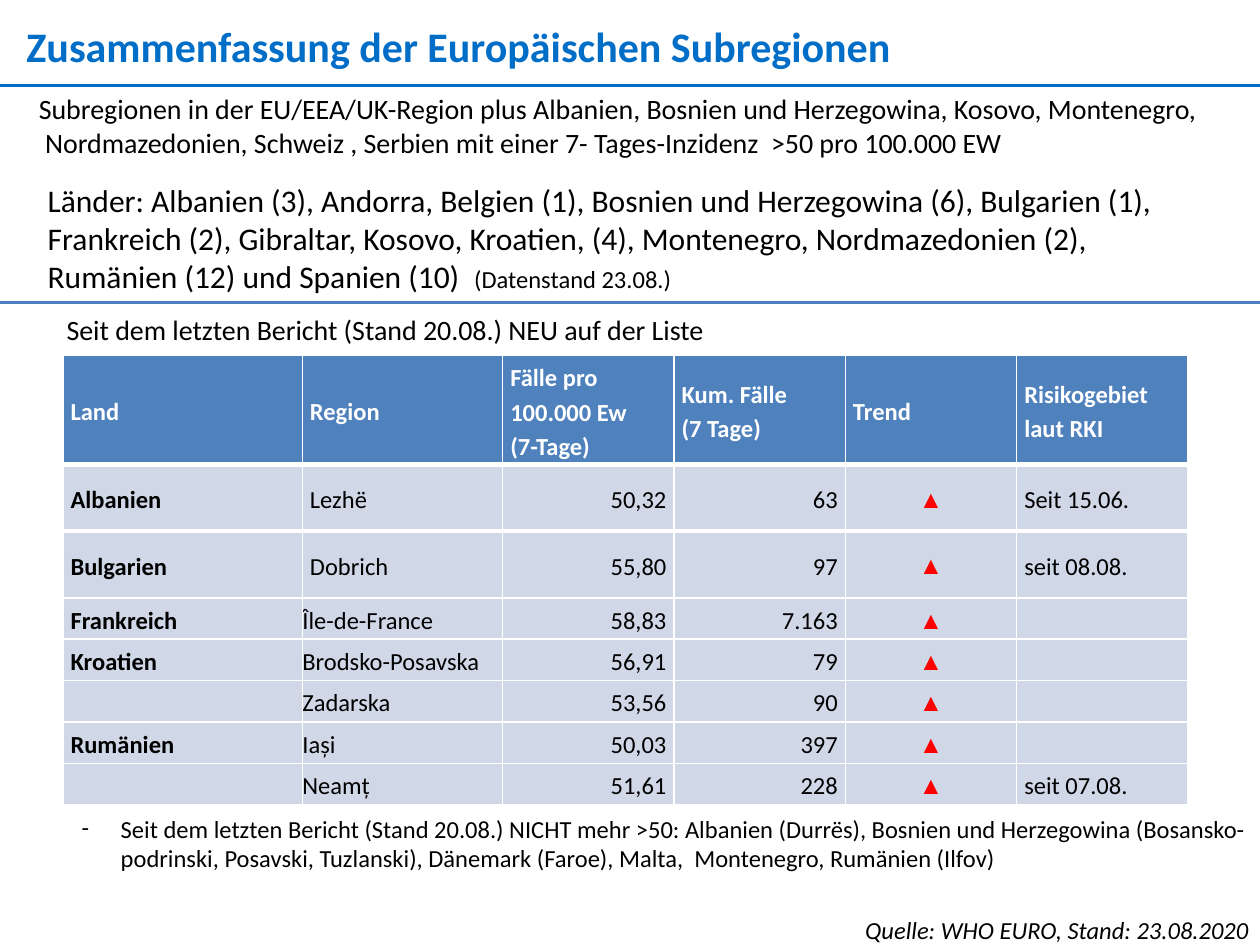
from dataclasses import dataclass

from lxml import etree
from pptx import Presentation
from pptx.dml.color import RGBColor
from pptx.enum import shapes, text
from pptx.oxml import ns
from pptx.util import Inches, Pt


@dataclass(frozen=True)
class Theme:
    font: str = "Calibri"
    symbol_font: str = "Arial"
    title: str = "006EC7"
    divider: str = "4B7EBC"
    header: str = "4F81BD"
    cell: str = "D0D8E8"
    ink: str = "000000"
    white: str = "FFFFFF"
    rising: str = "FF0000"
    title_size: int = 24
    countries_size: int = 18
    body_size: int = 16
    small_size: int = 14


THEME = Theme()
ALIGN = text.PP_ALIGN
HEADER = ["Land", "Region", "Fälle pro 100.000 Ew\n(7-Tage)", "Kum. Fälle\n(7 Tage)",
          "Trend", "Risikogebiet laut RKI"]
REGIONS = [
    ["Albanien", "Lezhë", "50,32", "63", "▲", "Seit 15.06."],
    ["Bulgarien", "Dobrich", "55,80", "97", "▲", "seit 08.08."],
    ["Frankreich", "Île-de-France", "58,83", "7.163", "▲", ""],
    ["Kroatien", "Brodsko-Posavska", "56,91", "79", "▲", ""],
    ["", "Zadarska", "53,56", "90", "▲", ""],
    ["Rumänien", "Iași", "50,03", "397", "▲", ""],
    ["", "Neamț", "51,61", "228", "▲", "seit 07.08."],
]
COLUMN_WIDTHS = [1.9, 1.59] + [1.36] * 4
ROW_HEIGHTS = [0.76, 0.53, 0.53] + [0.29] * 5
COLUMN_ALIGN = [ALIGN.LEFT, ALIGN.LEFT, ALIGN.RIGHT, ALIGN.RIGHT, ALIGN.CENTER, ALIGN.LEFT]


def set_all(target, values):
    for name, value in values.items():
        setattr(target, name, value)


def add_span(para, words, size, color=THEME.ink, **values):
    span = para.add_run()
    span.text = words
    set_all(span.font, {"name": THEME.font, "size": Pt(size), **values})
    span.font.color.rgb = RGBColor.from_string(color)


def place(shape, box):
    set_all(shape, dict(zip(("left", "top", "width", "height"), map(Inches, box))))


def add_title(page, box, words):
    title = page.shapes.title
    place(title, box)
    frame = title.text_frame
    set_all(frame, {"margin_left": 0, "margin_top": 0, "margin_right": 0, "margin_bottom": 0,
                    "word_wrap": True, "vertical_anchor": text.MSO_ANCHOR.TOP,
                    "auto_size": text.MSO_AUTO_SIZE.NONE})
    para = frame.paragraphs[0]
    para.alignment = ALIGN.LEFT
    add_span(para, words, THEME.title_size, THEME.title, bold=True)


def add_note(page, box, words, size, align=ALIGN.LEFT, **values):
    """Add a wrapped text box and return its paragraph."""
    frame = page.shapes.add_textbox(*map(Inches, box)).text_frame
    frame.word_wrap = True
    para = frame.paragraphs[0]
    para.alignment = align
    add_span(para, words, size, **values)
    return para


def add_dash(para, indent):
    properties = para._p.get_or_add_pPr()
    properties.set("marL", str(Inches(indent)))
    properties.set("indent", str(-Inches(indent)))
    etree.SubElement(properties, ns.qn("a:buFont"), typeface=THEME.font)
    etree.SubElement(properties, ns.qn("a:buChar"), char="-")


def add_divider(page, top, color, width):
    line = page.shapes.add_connector(shapes.MSO_CONNECTOR.STRAIGHT, 0, Inches(top),
                                     Inches(10), Inches(top))
    line.line.color.rgb = RGBColor.from_string(color)
    line.line.width = Pt(width)
    etree.SubElement(line._element.spPr, ns.qn("a:effectLst"))


def set_borders(cell, widths):
    properties = cell._tc.get_or_add_tcPr()
    for place_in_order, (side, width) in enumerate(widths.items()):
        border = etree.Element(ns.qn(f"a:ln{side}"), w=str(Pt(width)))
        fill = etree.SubElement(border, ns.qn("a:solidFill"))
        etree.SubElement(fill, ns.qn("a:srgbClr"), val=THEME.white)
        properties.insert(place_in_order, border)


def fill_cell(cell, words, row, column):
    is_header = row == 0
    is_trend = column == 4 and not is_header
    is_tight = (row >= 2 and column in (2, 3)) or (row >= 3 and column == 1)
    edge = 0 if is_tight else Inches(0.03)
    set_all(cell, {"margin_left": 0 if is_tight else Inches(0.06), "margin_right": Inches(0.06),
                   "margin_top": edge, "margin_bottom": edge,
                   "vertical_anchor": text.MSO_ANCHOR.MIDDLE})
    set_borders(cell, {"L": 1, "R": 1, "T": 3 if row in (1, 2) else 1,
                       "B": 3 if row in (0, 1) else 1})
    cell.fill.solid()
    cell.fill.fore_color.rgb = RGBColor.from_string(THEME.header if is_header else THEME.cell)

    frame = cell.text_frame
    for number, line in enumerate(words.split("\n")):
        para = frame.add_paragraph() if number else frame.paragraphs[0]
        set_all(para, {"line_spacing": 1.15, "space_before": Pt(2 if is_tight else 0),
                       "alignment": ALIGN.LEFT if is_header else COLUMN_ALIGN[column]})
        if not line:
            etree.SubElement(para._p, ns.qn("a:endParaRPr"), sz=str(THEME.small_size * 100))
            continue
        color = THEME.white if is_header else THEME.rising if is_trend else THEME.ink
        add_span(para, line, THEME.small_size, color, bold=is_header or column == 0,
                 name=THEME.symbol_font if is_trend else THEME.font)


def add_region_table(page, box):
    rows = [HEADER] + REGIONS
    table = page.shapes.add_table(len(rows), len(HEADER), *map(Inches, box)).table
    table.horz_banding = False
    for column, width in zip(table.columns, COLUMN_WIDTHS):
        column.width = Inches(width)
    for row, height in zip(table.rows, ROW_HEIGHTS):
        row.height = Inches(height)
    for row, values in enumerate(rows):
        for column, words in enumerate(values):
            fill_cell(table.cell(row, column), words, row, column)


def add_summary(page):
    add_title(page, (0.21, 0.16, 9.63, 0.4), "Zusammenfassung der Europäischen Subregionen")
    add_divider(page, 0.68, THEME.title, 1.5)
    add_note(page, (0.21, 0.68, 9.43, 0.64),
             "Subregionen in der EU/EEA/UK-Region plus Albanien, Bosnien und Herzegowina, Kosovo, "
             "Montenegro,  Nordmazedonien, Schweiz , Serbien mit einer 7- Tages-Inzidenz  "
             ">50 pro 100.000 EW", THEME.body_size)
    countries = add_note(
        page, (0.28, 1.39, 9.21, 1.01),
        "Länder: Albanien (3), Andorra, Belgien (1), Bosnien und Herzegowina (6), Bulgarien (1), "
        "Frankreich (2), Gibraltar, Kosovo, Kroatien, (4), Montenegro, Nordmazedonien (2), "
        "Rumänien (12) und Spanien (10)  ", THEME.countries_size)
    add_span(countries, "(Datenstand 23.08.)", THEME.small_size)
    add_divider(page, 2.4, THEME.divider, 1.75)


def add_changes(page):
    add_note(page, (0.43, 2.43, 7.95, 0.37),
             "Seit dem letzten Bericht (Stand 20.08.) NEU auf der Liste", THEME.body_size)
    add_region_table(page, (0.5, 2.82, sum(COLUMN_WIDTHS), sum(ROW_HEIGHTS)))
    removed = add_note(
        page, (0.55, 6.41, 9.45, 0.57),
        "Seit dem letzten Bericht (Stand 20.08.) NICHT mehr >50: Albanien (Durrës), Bosnien und "
        "Herzegowina (Bosansko-podrinski, Posavski, Tuzlanski), Dänemark (Faroe), Malta,  "
        "Montenegro, Rumänien (Ilfov)", THEME.small_size)
    add_dash(removed, 0.31)
    add_note(page, (5.39, 7.21, 4.62, 0.34), "Quelle: WHO EURO, Stand: 23.08.2020",
             THEME.small_size, ALIGN.RIGHT, italic=True)


def main():
    deck = Presentation()
    set_all(deck, {"slide_width": Inches(10), "slide_height": Inches(7.5)})
    page = deck.slides.add_slide(deck.slide_layouts[5])
    add_summary(page)
    add_changes(page)
    deck.save("out.pptx")


if __name__ == "__main__":
    main()
